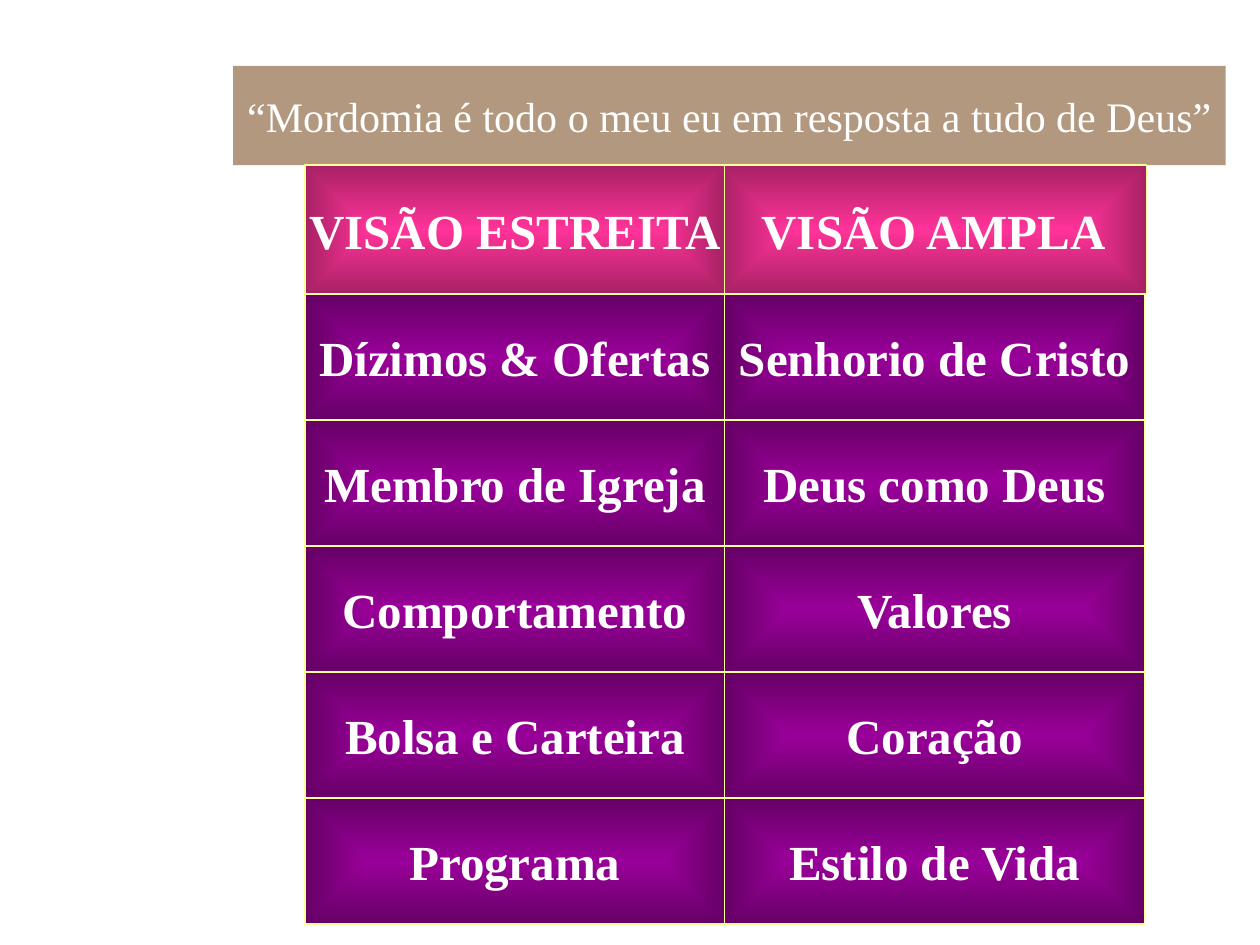
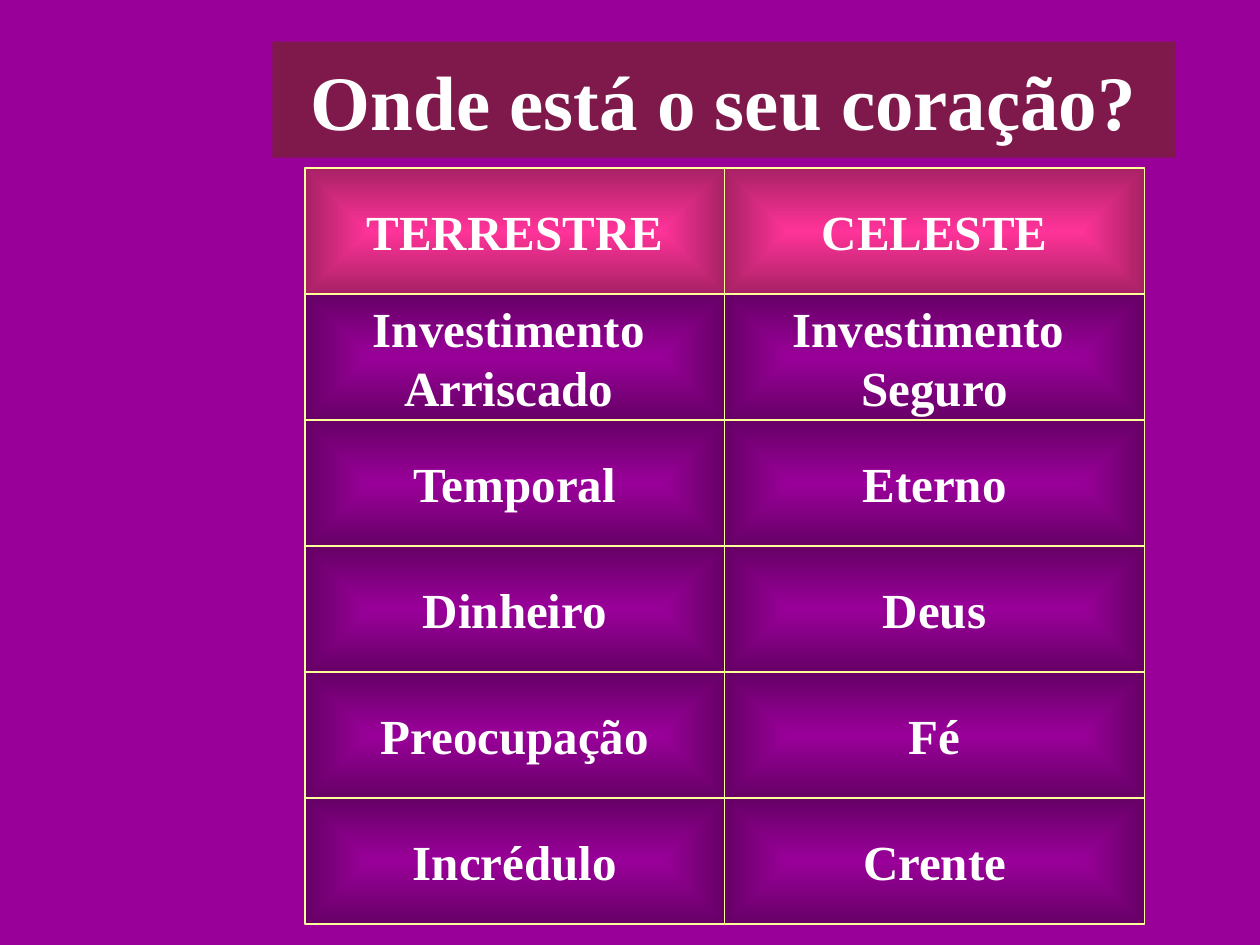
from pptx import Presentation
from pptx import util as u
from pptx.dml.color import RGBColor
from pptx.enum import shapes, text
from pptx.oxml import parse_xml
from pptx.oxml.ns import nsdecls, qn
from lxml import etree

COLOURS = {
    "white": "FFFFFF",
    "page": "990099",
    "band": "663300",
    "border": "FFFF99",
    "heading": "FF3399",
    "entry": "990099",
}
# Share of the centre colour kept at the edge, in thousandths of a percent
EDGE_SHADE = {"heading": 38000, "entry": 39500}
FONT = {"name": "Times New Roman", "bold": True, "size": u.Pt(28)}

COLUMN_LEFT, COLUMN_WIDTH = 6.15, 8.46
TABLE_TOP, ROW_HEIGHT = 3.39, 2.54

comparisons = [
    {
        "background": "white",
        "title": "“Mordomia é todo o meu eu em resposta a tudo de Deus”",
        "title_box": (4.7, 1.33, 20.01, 2.0),
        "title_font": {"size": u.Pt(24), "bold": False},
        # The heading row reaches up to the title, its right cell a bit wider
        "heading_rise": 0.06,
        "heading_overhang": 0.08,
        "rows": [
            ("VISÃO ESTREITA", "VISÃO AMPLA"),
            ("Dízimos & Ofertas", "Senhorio de Cristo"),
            ("Membro de Igreja", "Deus como Deus"),
            ("Comportamento", "Valores"),
            ("Bolsa e Carteira", "Coração"),
            ("Programa", "Estilo de Vida"),
        ],
    },
    {
        "background": "page",
        "title": "Onde está o seu coração?",
        "title_box": (5.49, 0.84, 18.21, 2.34),
        "title_font": {"size": u.Pt(44)},
        "heading_rise": 0,
        "heading_overhang": 0,
        "rows": [
            ("TERRESTRE", "CELESTE"),
            ("Investimento \nArriscado ", "Investimento \nSeguro"),
            ("Temporal", "Eterno"),
            ("Dinheiro", "Deus"),
            ("Preocupação", "Fé"),
            ("Incrédulo", "Crente"),
        ],
    },
]


def add_box(slide, box, words, font):
    """Add a rectangle with centred white text; the caller fills it."""
    shape = slide.shapes.add_shape(
        shapes.MSO_SHAPE.RECTANGLE, *[u.Cm(length) for length in box])
    shape.shadow.inherit = False
    frame = shape.text_frame
    frame.text = words
    frame.word_wrap = False
    frame.vertical_anchor = text.MSO_ANCHOR.MIDDLE
    for paragraph in frame.paragraphs:
        paragraph.alignment = text.PP_ALIGN.CENTER
        for key, value in {**FONT, **font}.items():
            setattr(paragraph.font, key, value)
        paragraph.font.color.rgb = RGBColor.from_string(COLOURS["white"])
    return shape


def glow(shape, kind):
    """Fill from a bright centre to dark edges, with a thin border."""
    colour = COLOURS[kind]
    shape.fill.gradient()
    properties = shape.element.spPr
    properties.replace(properties.find(qn("a:gradFill")), parse_xml(
        f'<a:gradFill {nsdecls("a")} rotWithShape="0"><a:gsLst>'
        f'<a:gs pos="0"><a:srgbClr val="{colour}"/></a:gs>'
        f'<a:gs pos="100000"><a:srgbClr val="{colour}">'
        f'<a:shade val="{EDGE_SHADE[kind]}"/></a:srgbClr></a:gs></a:gsLst>'
        '<a:path path="shape">'
        '<a:fillToRect l="50000" t="50000" r="50000" b="50000"/>'
        '</a:path></a:gradFill>'))
    shape.line.color.rgb = RGBColor.from_string(COLOURS["border"])
    shape.line.width = u.Pt(0.75)


presentation = Presentation()
presentation.slide_width = u.Cm(25.4)
presentation.slide_height = u.Cm(19.05)

for comparison in comparisons:
    slide = presentation.slides.add_slide(presentation.slide_layouts[6])
    backdrop = slide.background.fill
    backdrop.solid()
    backdrop.fore_color.rgb = RGBColor.from_string(
        COLOURS[comparison["background"]])

    title = add_box(slide, comparison["title_box"], comparison["title"],
                    comparison["title_font"])
    title.fill.solid()
    title.fill.fore_color.rgb = RGBColor.from_string(COLOURS["band"])
    band_colour = title.element.spPr.find(qn("a:solidFill"))[0]
    etree.SubElement(band_colour, qn("a:alpha")).set("val", "50000")
    title.line.fill.background()

    # Headings come last and the left column after the right, to lie on top
    for row, entries in reversed(list(enumerate(comparison["rows"]))):
        for column in (1, 0):
            is_heading = row == 0
            rise = comparison["heading_rise"] if is_heading else 0
            overhang = comparison["heading_overhang"] if is_heading else 0
            overhang *= column
            cell = add_box(
                slide,
                (COLUMN_LEFT + column * COLUMN_WIDTH - overhang,
                 TABLE_TOP + row * ROW_HEIGHT - rise,
                 COLUMN_WIDTH + 1.5 * overhang,
                 ROW_HEIGHT + rise),
                entries[column], {})
            glow(cell, "heading" if is_heading else "entry")

presentation.save("out.pptx")
